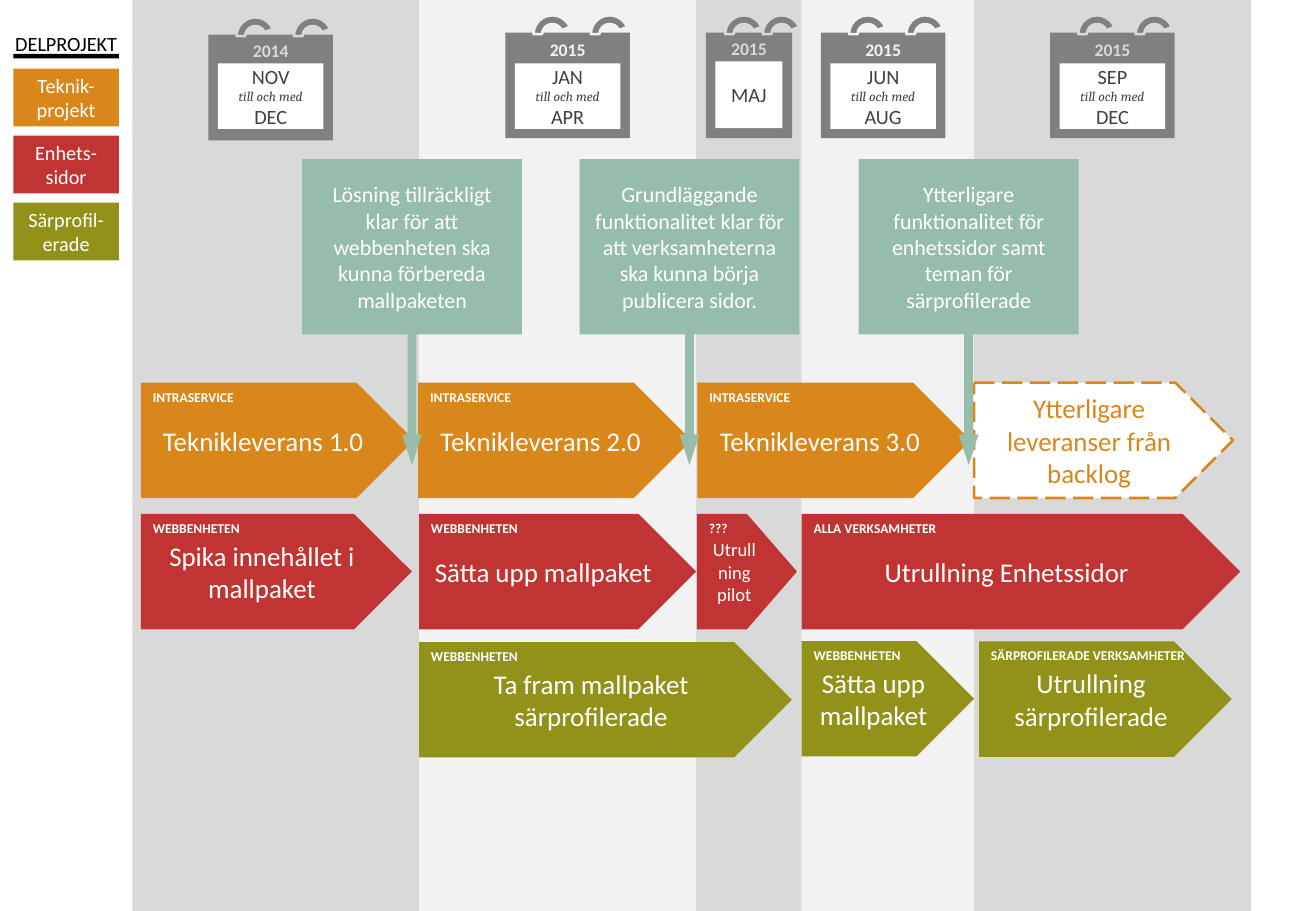
"""Build a one-slide project timeline with calendars, deliveries and milestones."""
from dataclasses import dataclass

from pptx import Presentation
from pptx.dml.color import RGBColor
from pptx.enum.dml import MSO_LINE
from pptx.enum.shapes import MSO_SHAPE
from pptx.enum.text import MSO_ANCHOR, PP_ALIGN
from pptx.util import Pt


@dataclass(frozen=True)
class Theme:
    dark: str = "D9D9D9"
    light: str = "F2F2F2"
    gray: str = "808080"
    ink: str = "404040"
    black: str = "000000"
    white: str = "FFFFFF"
    orange: str = "D9861A"
    red: str = "C03533"
    olive: str = "929119"
    mint: str = "96BCAA"
    sans: str = "Calibri"
    serif: str = "Cambria"
    tiny: float = 8
    year: float = 10.5
    small: float = 11
    base: float = 12
    note: float = 13
    large: float = 16


theme = Theme()


def write(shape, text, size=theme.base, color=theme.white, font=theme.sans, bold=False,
          italic=False, align=PP_ALIGN.CENTER, anchor=MSO_ANCHOR.MIDDLE, side=7.2, top=3.6):
    frame = shape.text_frame
    frame.word_wrap = True
    frame.vertical_anchor = anchor
    frame.margin_left = frame.margin_right = Pt(side)
    frame.margin_top, frame.margin_bottom = Pt(top), Pt(3.6)
    para = frame.add_paragraph() if frame.text else frame.paragraphs[0]
    para.text = text
    para.alignment = align
    for run in para.runs:
        run.font.name, run.font.size = font, Pt(size)
        run.font.bold, run.font.italic = bold, italic
        run.font.color.rgb = RGBColor.from_string(color)


def draw(kind, left, top, width, height, fill, line=None, adjust=()):
    shape = slide.shapes.add_shape(kind, Pt(left), Pt(top), Pt(width), Pt(height))
    shape.shadow.inherit = False
    shape.fill.solid()
    shape.fill.fore_color.rgb = RGBColor.from_string(fill)
    if line:
        shape.line.color.rgb = RGBColor.from_string(line)
        shape.line.width = Pt(1.5)
    else:
        shape.line.fill.background()
    for spot, value in enumerate(adjust):
        shape.adjustments[spot] = value
    return shape


deck = Presentation()
deck.slide_width, deck.slide_height = Pt(780), Pt(540)
slide = deck.slides.add_slide(deck.slide_layouts[5])

title = slide.shapes.title
title.left, title.top, title.width, title.height = Pt(0), Pt(15), Pt(78.5), Pt(21.8)
write(title, "DELPROJEKT", color=theme.black, anchor=MSO_ANCHOR.TOP)
draw(MSO_SHAPE.RECTANGLE, 7.9, 31.9, 62.6, 2.7, theme.black)

legend = [("Teknik-projekt", theme.orange), ("Enhets-\vsidor", theme.red),
          ("Särprofil-erade", theme.olive)]
for row, (name, fill) in enumerate(legend):
    write(draw(MSO_SHAPE.RECTANGLE, 7.9, 40.7 + 39.7 * row, 62.6, 34.2, fill), name, side=0)

edges = [78.5, 248.4, 412.6, 475.2, 577.4, 741.6]
for col, (left, right) in enumerate(zip(edges, edges[1:])):
    shade = theme.light if col % 2 else theme.dark
    draw(MSO_SHAPE.RECTANGLE, left, 0, right - left, 540, shade)

months = [
    (123.6, 20.6, 73.8, "2014", theme.dark, ["NOV", "DEC"]),
    (299.6, 19.4, 73.8, "2015", theme.light, ["JAN", "APR"]),
    (418.4, 19.4, 51.1, "2015", theme.dark, ["MAJ"]),
    (486.6, 19.4, 73.8, "2015", theme.light, ["JUN", "AUG"]),
    (622.5, 19.4, 73.8, "2015", theme.dark, ["SEP", "DEC"]),
]
for left, top, width, year, shade, names in months:
    single = len(names) == 1
    page = draw(MSO_SHAPE.RECTANGLE, left, top, width, 62.6, theme.gray)
    write(page, year, size=theme.year, color=shade, bold=True, anchor=MSO_ANCHOR.TOP,
          top=2.9 if single or year == "2014" else 3.6)
    card = draw(MSO_SHAPE.RECTANGLE, left + 5.6, 36.4 if single else 37.6, width - 11.3,
                39.6 if single else 38.8, theme.white)
    write(card, names[0], color=theme.ink)
    if not single:
        write(card, "till och med", size=theme.tiny, color=theme.ink,
              font=theme.serif, italic=True)
        write(card, names[1], color=theme.ink)
    for shift in ((11.4, 33.7) if single else (16.6, 50.6)):
        draw(MSO_SHAPE.BLOCK_ARC, left + shift, top - 10.3, 22.3, 22.3, theme.gray,
             line=shade, adjust=(108, 202.34, 0.23))

plan = draw(MSO_SHAPE.PENTAGON, 577.4, 226.8, 153.4, 68.4, theme.white, line=theme.orange)
plan.line.dash_style = MSO_LINE.LONG_DASH
write(plan, "Ytterligare leveranser från backlog", size=theme.large, color=theme.orange)

steps = [
    (83.5, 226.8, 162, theme.orange, "INTRASERVICE", "Teknikleverans 1.0"),
    (247.9, 226.8, 162, theme.orange, "INTRASERVICE", "Teknikleverans 2.0"),
    (413.4, 226.8, 162, theme.orange, "INTRASERVICE", "Teknikleverans 3.0"),
    (83.5, 304.6, 160.6, theme.red, "WEBBENHETEN", "Spika innehållet i mallpaket"),
    (248.4, 304.6, 164.2, theme.red, "WEBBENHETEN", "Sätta upp mallpaket"),
    (413, 304.6, 59.4, theme.red, "???", "Utrullning pilot"),
    (475.2, 304.6, 259.9, theme.red, "ALLA VERKSAMHETER", "Utrullning Enhetssidor"),
    (248.4, 380.6, 221, theme.olive, "WEBBENHETEN", "Ta fram mallpaket särprofilerade"),
    (475.2, 380, 102.2, theme.olive, "WEBBENHETEN", "Sätta upp mallpaket"),
    (580.3, 380.2, 149.8, theme.olive, "SÄRPROFILERADE VERKSAMHETER",
     "Utrullning särprofilerade"),
]
for left, top, width, fill, owner, task in steps:
    short = width < 60
    plate = draw(MSO_SHAPE.PENTAGON, left, top, width, 68.4, fill)
    write(plate, task, size=theme.small if short else theme.large)
    label = slide.shapes.add_textbox(Pt(left), Pt(top), Pt(51 if short else 136), Pt(17))
    write(label, owner, size=theme.tiny, bold=True, align=PP_ALIGN.LEFT,
          anchor=MSO_ANCHOR.TOP)

goals = [
    (179, "Lösning tillräckligt klar för att webbenheten ska kunna förbereda mallpaketen"),
    (343.5, "Grundläggande funktionalitet klar för att verksamheterna ska kunna börja "
            "publicera sidor."),
    (509, "Ytterligare funktionalitet för enhetssidor samt teman för särprofilerade"),
]
for left, text in goals:
    goal = draw(MSO_SHAPE.DOWN_ARROW_CALLOUT, left, 94.3, 130.3, 181.4, theme.mint,
                adjust=(0.04, 0.045, 0.14, 0.573))
    write(goal, text, size=theme.note)

deck.save("out.pptx")
